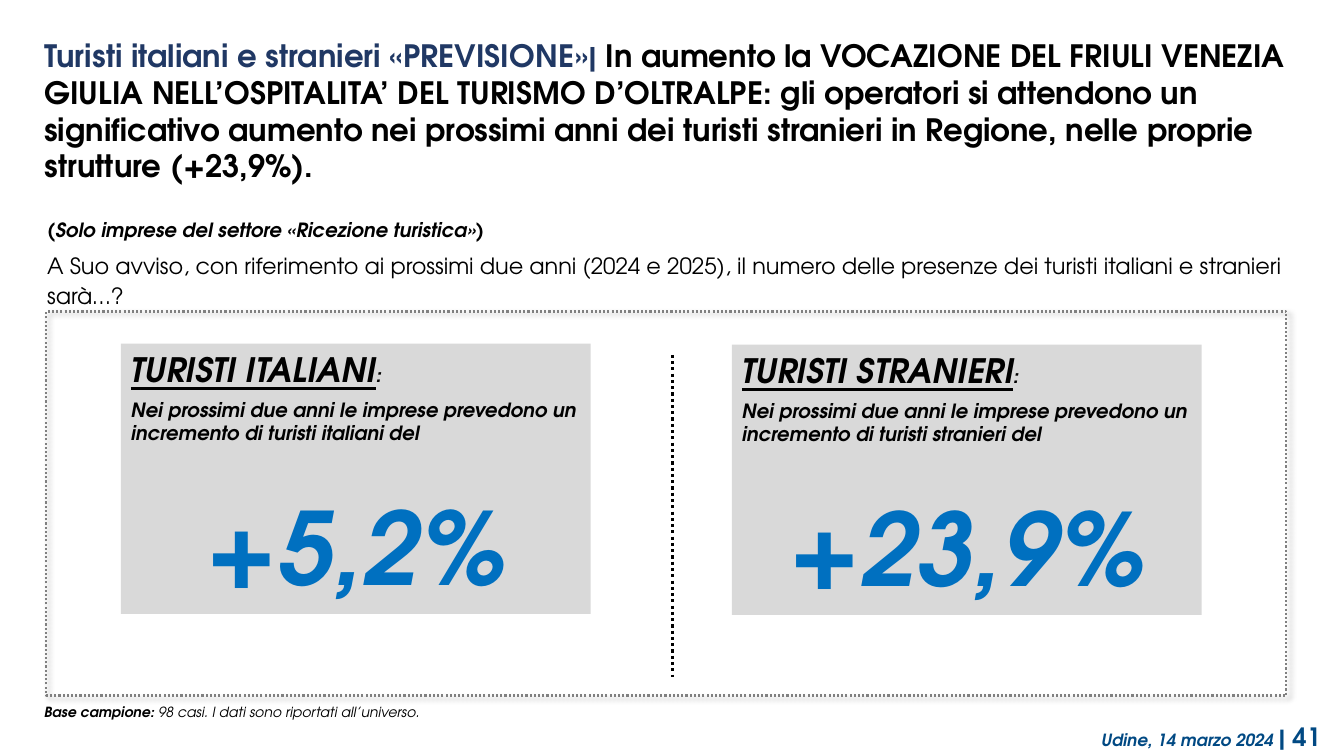
"""Build the slide on the forecast of Italian and foreign tourists."""
from lxml.etree import SubElement
from pptx import Presentation
from pptx.dml.color import RGBColor
from pptx.enum.dml import MSO_LINE
from pptx.enum.shapes import MSO_CONNECTOR, MSO_SHAPE
from pptx.enum.text import MSO_ANCHOR, MSO_AUTO_SIZE, PP_ALIGN
from pptx.oxml.ns import qn
from pptx.util import Inches, Pt

FONT = "TeX Gyre Adventor"
BLACK = RGBColor(0x00, 0x00, 0x00)
NAVY = RGBColor(0x20, 0x38, 0x64)
FOOTER_BLUE = RGBColor(0x01, 0x49, 0x83)
FIGURE_BLUE = RGBColor(0x00, 0x70, 0xC0)
PANEL_GRAY = RGBColor(0xD9, 0xD9, 0xD9)
FRAME_GRAY = RGBColor(0x80, 0x80, 0x80)


def write(para, texts, size, color=BLACK, bold=True, italic=True, align=PP_ALIGN.LEFT, before=0):
    para.alignment = align
    para.space_before = Pt(before)
    para.font.name = FONT
    para.font.size = Pt(size)
    para.font.color.rgb = color
    para.font.bold = bold
    para.font.italic = italic
    spans = []
    for text in texts:
        span = para.add_run()
        span.text = text
        spans.append(span)
    return spans


def add_text(page, left, top, width, height, anchor=MSO_ANCHOR.TOP):
    box = page.shapes.add_textbox(Inches(left), Inches(top), Inches(width), Inches(height))
    box.text_frame.word_wrap = True
    box.text_frame.vertical_anchor = anchor
    return box.text_frame


deck = Presentation()
deck.slide_width = Inches(13.33)
deck.slide_height = Inches(7.5)
page = deck.slides.add_slide(deck.slide_layouts[5])

footer = add_text(page, 6.27, 7.11, 6.93, 0.4, MSO_ANCHOR.MIDDLE)
place_span, number_span = write(footer.paragraphs[0], ["Udine, 14 marzo 2024 ", "| 41"], 12,
                                FOOTER_BLUE, align=PP_ALIGN.RIGHT)
number_span.font.size = Pt(18)
number_span.font.italic = False

title = page.shapes.title
title.left, title.top, title.width, title.height = (Inches(n) for n in (0.37, 0.32, 12.68, 1.56))
frame = title.text_frame
frame.auto_size = MSO_AUTO_SIZE.NONE
frame.word_wrap = True
frame.vertical_anchor = MSO_ANCHOR.TOP
frame.margin_left = frame.margin_right = Inches(0.07)
frame.margin_top = frame.margin_bottom = Inches(0.04)
topic_span, message_span = write(frame.paragraphs[0], [
    "Turisti italiani e stranieri «PREVISIONE»| ",
    "In aumento la VOCAZIONE DEL FRIULI VENEZIA GIULIA NELL’OSPITALITA’ DEL TURISMO D’OLTRALPE: "
    "gli operatori si attendono un significativo aumento nei prossimi anni dei turisti stranieri "
    "in Regione, nelle proprie strutture (+23,9%).",
], 22, italic=False)
topic_span.font.color.rgb = NAVY

border = page.shapes.add_shape(MSO_SHAPE.RECTANGLE, Inches(0.46), Inches(3.09), Inches(12.3), Inches(3.81))
border.fill.background()
border.line.color.rgb = FRAME_GRAY
border.line.width = Pt(1.5)
border.line.dash_style = MSO_LINE.ROUND_DOT
border.shadow.inherit = False
effects = border.element.spPr.find(qn("a:effectLst"))
shadow = SubElement(effects, qn("a:outerShdw"), blurRad=str(Pt(4)), dist=str(Pt(3)),
                    dir="2700000", algn="tl", rotWithShape="0")
shadow_color = SubElement(shadow, qn("a:srgbClr"), val=str(BLACK))
SubElement(shadow_color, qn("a:alpha"), val="40000")

sample = add_text(page, 0.34, 6.93, 12.74, 0.27)
label_span, note_span = write(sample.paragraphs[0], [
    "Base campione: ", "98 casi. I dati sono riportati all’universo."], 10)
note_span.font.bold = False

question = add_text(page, 0.37, 2.09, 12.76, 1.01)
write(question.paragraphs[0], ["(Solo imprese del settore «Ricezione turistica»)"], 14)
write(question.add_paragraph(), [
    "A Suo avviso, con riferimento ai prossimi due anni (2024 e 2025), il numero delle presenze "
    "dei turisti italiani e stranieri sarà…?"], 16, bold=False, italic=False, before=6)
for para in question.paragraphs:
    para.line_spacing = 1.1

for left, top, group, figure in [(1.2, 3.41, "italiani", "+5,2%"), (7.26, 3.42, "stranieri", "+23,9%")]:
    panel = page.shapes.add_shape(MSO_SHAPE.RECTANGLE, Inches(left), Inches(top), Inches(4.66), Inches(2.68))
    panel.shadow.inherit = False
    panel.fill.solid()
    panel.fill.fore_color.rgb = PANEL_GRAY
    panel.line.fill.background()
    frame = panel.text_frame
    frame.word_wrap = True
    frame.vertical_anchor = MSO_ANCHOR.TOP
    heading_span, colon_span = write(frame.paragraphs[0], [f"TURISTI {group.upper()}", ":"], 24)
    heading_span.font.underline = True
    colon_span.font.size = Pt(14)
    write(frame.add_paragraph(), [
        f"Nei prossimi due anni le imprese prevedono un incremento di turisti {group} del"], 14, before=6)
    write(frame.add_paragraph(), [figure], 72, FIGURE_BLUE, align=PP_ALIGN.CENTER, before=29)

divider = page.shapes.add_connector(MSO_CONNECTOR.STRAIGHT, Inches(6.67), Inches(3.52), Inches(6.67), Inches(6.72))
divider.line.color.rgb = BLACK
divider.line.width = Pt(2.25)
divider.line.dash_style = MSO_LINE.ROUND_DOT
SubElement(divider.element.spPr, qn("a:effectLst"))

deck.save("out.pptx")
